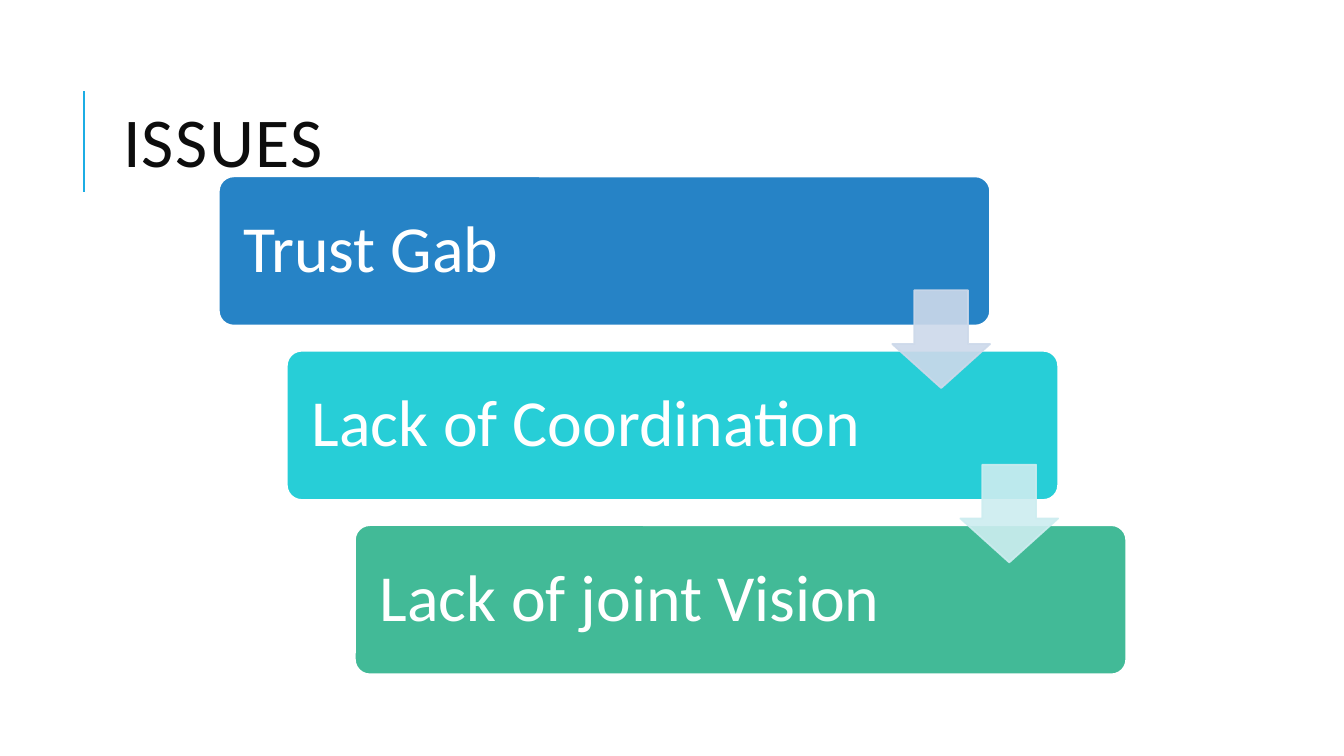
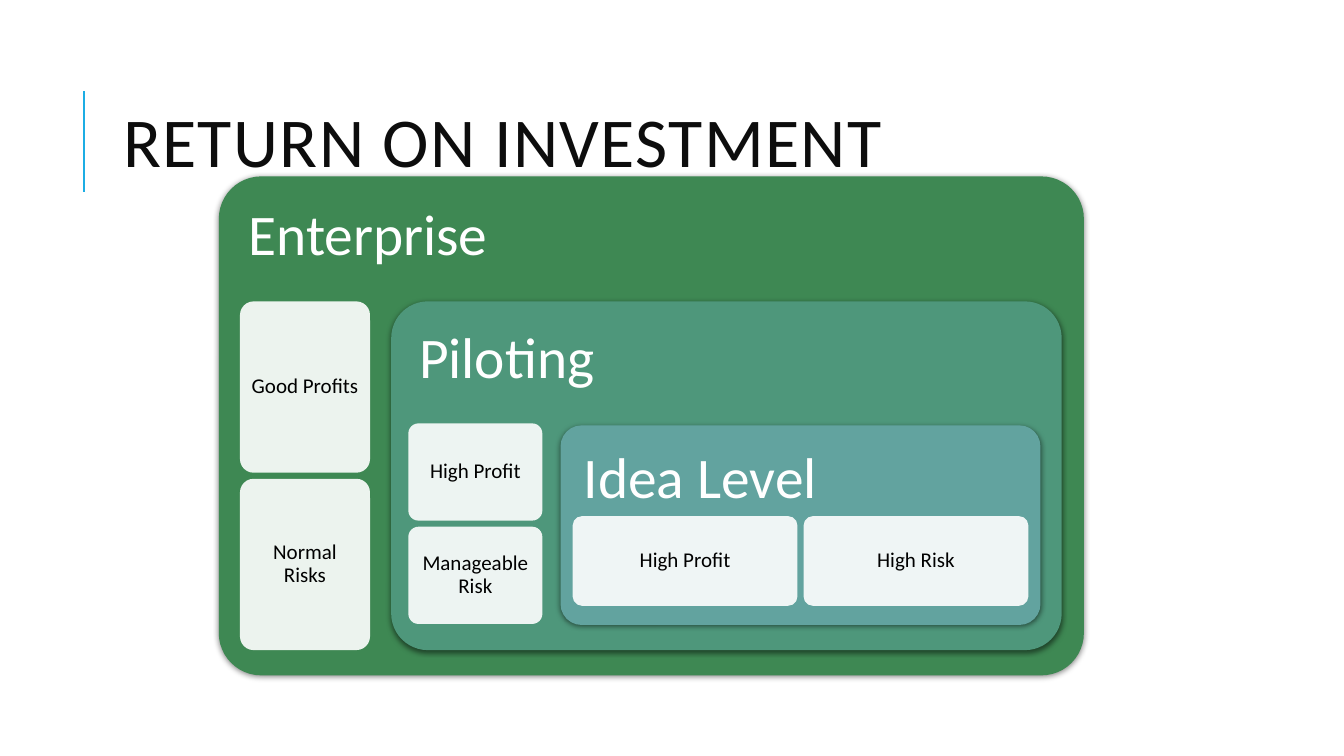
from typing import NamedTuple

from lxml.etree import SubElement
from pptx import Presentation
from pptx.dml.color import RGBColor
from pptx.enum.shapes import MSO_CONNECTOR, MSO_SHAPE
from pptx.enum.text import MSO_ANCHOR, MSO_AUTO_SIZE, PP_ALIGN
from pptx.oxml.ns import qn
from pptx.util import Inches, Pt

FONT = "Calibri"
WHITE = RGBColor(0xFF, 0xFF, 0xFF)
BLACK = RGBColor(0x00, 0x00, 0x00)
TITLE_COLOR = RGBColor(0x0D, 0x0D, 0x0D)
ACCENT = RGBColor(0x1C, 0xAD, 0xE4)
BLUE = RGBColor(0x26, 0x83, 0xC6)
TURQUOISE = RGBColor(0x27, 0xCE, 0xD7)
MINT = RGBColor(0x42, 0xBA, 0x97)
PALE_BLUE = RGBColor(0xCD, 0xD9, 0xEA)
PALE_TURQUOISE = RGBColor(0xCD, 0xED, 0xF0)
GREEN = RGBColor(0x3E, 0x88, 0x53)
SEA_GREEN = RGBColor(0x4E, 0x97, 0x7B)
TEAL = RGBColor(0x62, 0xA3, 0x9F)

TITLE_ONLY = 5
OPACITY = 90
LABEL_GAP = 0.06


class Box(NamedTuple):
    """A rectangle in inches."""

    left: float
    top: float
    width: float
    height: float

    def inside(self, left, top, width, height):
        """Return a box whose position is measured from this one."""
        return Box(self.left + left, self.top + top, width, height)

    def lengths(self):
        """Return the four measures as slide lengths."""
        return [Inches(value) for value in self]


def set_opacity(shape, percent):
    """Make the fill and line of a shape partly transparent."""
    for color in shape._element.spPr.iter(qn("a:srgbClr")):
        SubElement(color, qn("a:alpha"), val=str(percent * 1000))


def add_block(slide, kind, box, color, adjustments, opacity=100, outline=None):
    """Add a flat preset shape."""
    shape = slide.shapes.add_shape(kind, *box.lengths())
    shape.shadow.inherit = False
    for index, value in enumerate(adjustments):
        shape.adjustments[index] = value
    shape.fill.solid()
    shape.fill.fore_color.rgb = color
    if outline is None:
        shape.line.fill.background()
    else:
        shape.line.color.rgb = outline
        shape.line.width = Pt(1.25)
    if opacity < 100:
        set_opacity(shape, opacity)
    return shape


def write(shape, text, size, color, margin=0.1, align=PP_ALIGN.LEFT,
          anchor=MSO_ANCHOR.MIDDLE, spacing=0.9):
    """Fill a shape with one formatted paragraph and return its run."""
    frame = shape.text_frame
    frame.word_wrap = True
    frame.auto_size = MSO_AUTO_SIZE.NONE
    frame.vertical_anchor = anchor
    frame.margin_left = frame.margin_right = Inches(margin)
    frame.margin_top = frame.margin_bottom = Inches(margin)
    paragraph = frame.paragraphs[0]
    paragraph.alignment = align
    paragraph.line_spacing = spacing
    run = paragraph.add_run()
    run.text = text
    run.font.name = FONT
    run.font.size = Pt(size)
    run.font.color.rgb = color
    return run


def add_titled_slide(presentation, title):
    """Add a slide with the shared title style and accent line."""
    slide = presentation.slides.add_slide(presentation.slide_layouts[TITLE_ONLY])
    line = slide.shapes.add_connector(
        MSO_CONNECTOR.STRAIGHT, Inches(0.83), Inches(1.9), Inches(0.83), Inches(0.9))
    line.line.color.rgb = ACCENT
    line.line.width = Pt(1.5)
    SubElement(line._element.spPr, qn("a:effectLst"))
    shape = slide.shapes.title
    shape.left, shape.top, shape.width, shape.height = Box(1.12, 0.64, 10.63, 1.64).lengths()
    run = write(shape, title, 50, TITLE_COLOR, spacing=0.8)
    run._r.get_or_add_rPr().set("spc", "100")
    return slide


def add_staircase(slide, box, steps, arrow_colors):
    """Draw descending steps in a box, joined by down arrows."""
    width, height, arrow = 7.65, 1.48, 0.97
    shift = (box.width - width) / (len(steps) - 1)
    drop = (box.height - height) / (len(steps) - 1)
    step_boxes = [box.inside(index * shift, index * drop, width, height)
                  for index in range(len(steps))]
    for step_box, (text, color) in zip(step_boxes, steps):
        step = add_block(slide, MSO_SHAPE.ROUNDED_RECTANGLE, step_box, color, [0.1],
                         outline=WHITE)
        write(step, text, 47, WHITE, margin=0.2)
    for step_box, color in zip(step_boxes, arrow_colors):
        add_block(slide, MSO_SHAPE.DOWN_ARROW,
                  step_box.inside(width - arrow, 1.13, arrow, arrow),
                  color, [0.55, 0.45], OPACITY, outline=color)


def add_panel(slide, box, text, color, corner):
    """Draw a shadowed panel with its heading at the top."""
    panel = add_block(slide, MSO_SHAPE.ROUNDED_RECTANGLE, box, color, [corner])
    write(panel, text, 41, WHITE, margin=0.17, anchor=MSO_ANCHOR.TOP)
    effects = panel._element.spPr.find(qn("a:effectLst"))
    shadow = SubElement(effects, qn("a:outerShdw"), blurRad=str(Pt(4)), dist=str(Pt(1)),
                        dir="5400000", algn="ctr", rotWithShape="0")
    shadow_color = SubElement(shadow, qn("a:srgbClr"), val=str(BLACK))
    SubElement(shadow_color, qn("a:alpha"), val="50000")


def add_labels(slide, box, texts, stacked):
    """Share a box equally among labels, stacked or side by side."""
    count = len(texts)
    gaps = LABEL_GAP * (count - 1)
    width = box.width if stacked else (box.width - gaps) / count
    height = (box.height - gaps) / count if stacked else box.height
    for index, text in enumerate(texts):
        left = 0 if stacked else index * (width + LABEL_GAP)
        top = index * (height + LABEL_GAP) if stacked else 0
        label = add_block(slide, MSO_SHAPE.ROUNDED_RECTANGLE,
                          box.inside(left, top, width, height), WHITE, [0.105], OPACITY)
        write(label, text, 15, BLACK, margin=0.06, align=PP_ALIGN.CENTER)


def add_nested_panels(slide, box):
    """Draw three panels, each inside the one before, with their labels."""
    add_panel(slide, box, "Enterprise", GREEN, 0.085)
    add_labels(slide, box.inside(0.21, 1.24, 1.29, 3.46),
               ["Good Profits", "Normal Risks"], stacked=True)
    piloting = box.inside(1.71, 1.24, 6.65, 3.46)
    add_panel(slide, piloting, "Piloting", SEA_GREEN, 0.105)
    add_labels(slide, piloting.inside(0.17, 1.21, 1.33, 1.99),
               ["High Profit", "Manageable Risk"], stacked=True)
    idea = piloting.inside(1.68, 1.23, 4.76, 1.98)
    add_panel(slide, idea, "Idea Level", TEAL, 0.105)
    add_labels(slide, idea.inside(0.12, 0.9, 4.52, 0.89),
               ["High Profit", "High Risk"], stacked=False)


def main():
    """Build and save the presentation."""
    presentation = Presentation()
    presentation.slide_width = Inches(13.33)
    presentation.slide_height = Inches(7.5)
    issues = add_titled_slide(presentation, "ISSUES")
    add_staircase(
        issues, Box(2.17, 1.75, 9, 4.94),
        [("Trust Gab", BLUE), ("Lack of Coordination", TURQUOISE),
         ("Lack of joint Vision", MINT)],
        [PALE_BLUE, PALE_TURQUOISE])
    investment = add_titled_slide(presentation, "RETURN ON INVESTMENT")
    add_nested_panels(investment, Box(2.17, 1.75, 8.58, 4.95))
    presentation.save("out.pptx")


if __name__ == "__main__":
    main()
